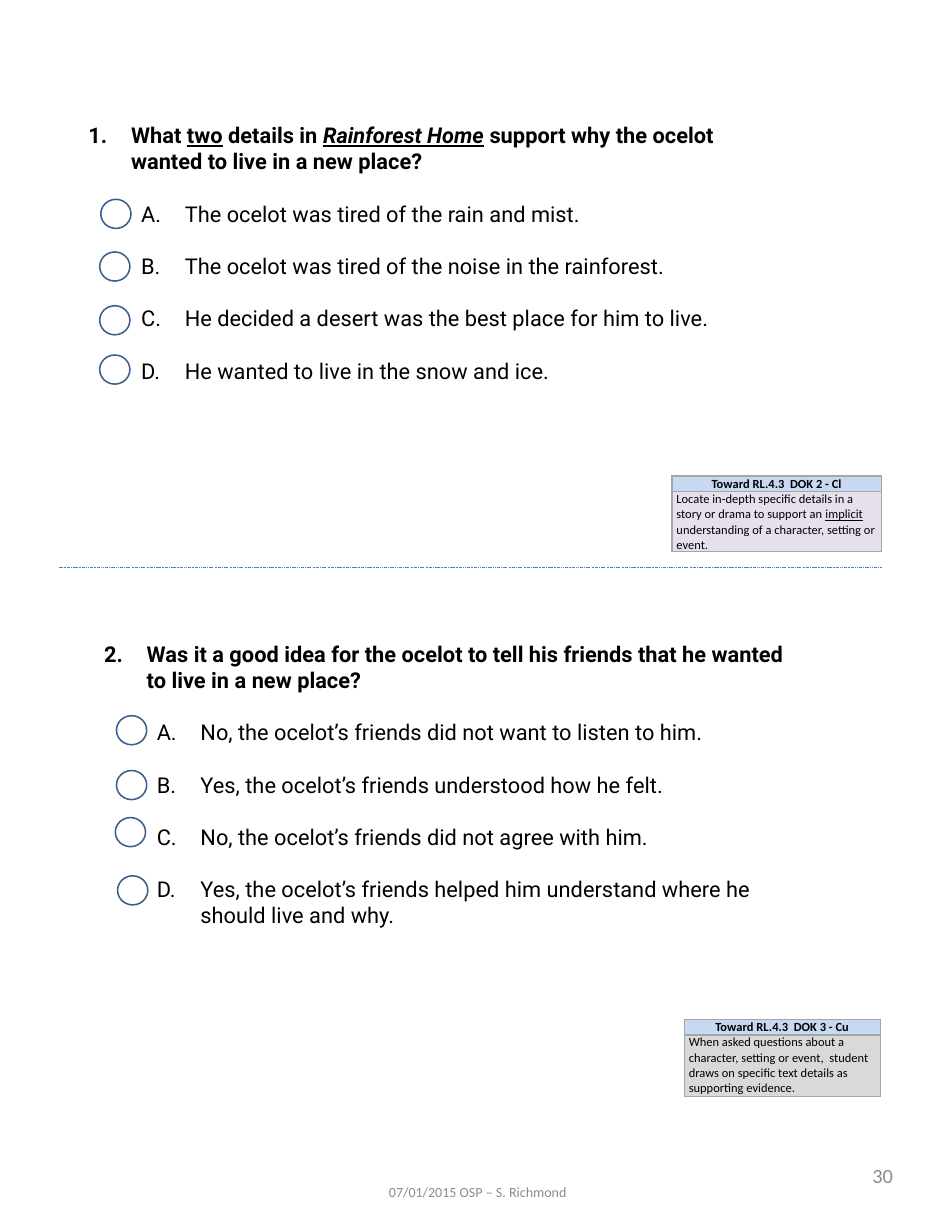
from lxml.etree import SubElement
from pptx import Presentation
from pptx.dml.color import RGBColor
from pptx.enum.shapes import MSO_CONNECTOR, MSO_SHAPE
from pptx.enum.text import MSO_ANCHOR, PP_ALIGN
from pptx.oxml.ns import qn
from pptx.util import Inches, Pt

# Page grid: 85 columns by 110 rows
deck = Presentation()
deck.slide_width, deck.slide_height = Inches(8.5), Inches(11)
COL, ROW = deck.slide_width // 85, deck.slide_height // 110
page = deck.slides.add_slide(deck.slide_layouts[6])
items = page.shapes


def hue(code):
    return RGBColor.from_string(code)


def write(para, text, font="Roboto", size=14, color="000000", bold=False,
          italic=False, line=False, align=None):
    run = para.add_run()
    run.text = text
    face = run.font
    face.name, face.size, face.color.rgb = font, Pt(size), hue(color)
    face.bold, face.italic, face.underline = bold, italic, line
    if align is not None:
        para.alignment = align


# Footer and page number
for left, top, wide, text, size, align in (
        (29.2, 103.5, 26.9, "07/01/2015 OSP – S. Richmond", 9, PP_ALIGN.CENTER),
        (60.9, 102, 19.8, "30", 13, PP_ALIGN.RIGHT)):
    box = items.add_textbox(int(left * COL), int(top * ROW), int(wide * COL), int(5.9 * ROW))
    frame = box.text_frame
    frame.word_wrap, frame.vertical_anchor = True, MSO_ANCHOR.MIDDLE
    write(frame.paragraphs[0], text, font="Calibri", size=size, color="8C8C8C", align=align)

# Dashed rule between the two questions
rule = items.add_connector(MSO_CONNECTOR.STRAIGHT, int(5.3 * COL), int(50.6 * ROW),
                           int(78.7 * COL), int(50.6 * ROW))
rule.line.color.rgb, rule.line.width = hue("4B7EBC"), Pt(0.25)
SubElement(rule._element.spPr.find(qn("a:ln")), qn("a:prstDash"), val="lgDashDotDot")
SubElement(rule._element.spPr, qn("a:effectLst"))

# Questions: left, top, width, stem runs, answers, circle corners
tests = (
    (6.2, 10.3, 62.1,
     (("What ", {}), ("two", {"line": True}), (" details in ", {}),
      ("Rainforest Home", {"italic": True, "line": True}), (" ", {"italic": True}),
      ("support why the ocelot wanted to live in a new place?", {})),
     ("The ocelot was tired of the rain and mist.",
      "The ocelot was tired of the noise in the rainforest.",
      "He decided a desert was the best place for him to live.",
      "He wanted to live in the snow and ice."),
     ((9, 17.8), (8.9, 22.5), (8.9, 27.3), (8.9, 31.7))),
    (7.6, 56.6, 64.9,
     (("Was it a good idea for the ocelot to tell his friends that he wanted "
       "to live in a new place?", {}),),
     ("No, the ocelot’s friends did not want to listen to him.",
      "Yes, the ocelot’s friends understood how he felt.",
      "No, the ocelot’s friends did not agree with him.",
      "Yes, the ocelot’s friends helped him understand where he should live and why."),
     ((10.4, 63.9), (10.4, 68.8), (10.3, 73), (10.5, 78.2))),
)
for num, (left, top, wide, stem, picks, rings) in enumerate(tests, 1):
    box = items.add_textbox(int(left * COL), int(top * ROW), int(wide * COL), int(29.4 * ROW))
    frame = box.text_frame
    frame.word_wrap = True
    frame.margin_left = frame.margin_right = Inches(0.11)
    frame.margin_top = frame.margin_bottom = Inches(0.06)
    rows = [(stem, True)] + [(((pick, {}),), False) for pick in picks]
    for at, (runs, head) in enumerate(rows):
        para = frame.paragraphs[0] if at == 0 else frame.add_paragraph()
        props = para._p.get_or_add_pPr()
        props.set("marL", str(Inches(0.44 if head else 0.92)))
        props.set("indent", str(Inches(-0.38 if head else -0.39)))
        para.space_before = Pt(0 if head else 16.8)
        mark = SubElement(props, qn("a:buAutoNum"),
                          type="arabicPeriod" if head else "alphaUcPeriod")
        if head:
            mark.set("startAt", str(num))
        for text, form in runs:
            write(para, text, bold=head, **form)

    # Answer circles
    for x, y in rings:
        ring = items.add_shape(MSO_SHAPE.OVAL, int(x * COL), int(y * ROW),
                               int(2.7 * COL), int(2.6 * ROW))
        ring.shadow.inherit = False
        ring.fill.solid()
        ring.fill.fore_color.rgb = hue("FFFFFF")
        ring.line.color.rgb, ring.line.width = hue("3A5F8C"), Pt(1)

# Standard tables: left, top, width, body height, body fill, head, body runs
cards = (
    (60, 42.5, 18.7, 5, "E6E0EC", "Toward RL.4.3  DOK 2 - Cl",
     (("Locate in-depth specific details in a story or drama to support an ", False),
      ("implicit ", True),
      ("understanding of a character, setting or event.", False))),
    (61.1, 91, 17.5, 5.5, "D9D9D9", "Toward RL.4.3  DOK 3 - Cu",
     (("When asked questions about a character, setting or event,  student draws "
       "on specific text details as supporting evidence.", False),)),
)
for left, top, wide, high, fill, head, body in cards:
    grid = items.add_table(2, 1, int(left * COL), int(top * ROW), int(wide * COL),
                           int((1.4 + high) * ROW)).table
    grid.rows[0].height, grid.rows[1].height = int(1.4 * ROW), int(high * ROW)
    for at, (tint, runs) in enumerate((("C6D9F1", ((head, False),)), (fill, body))):
        cell = grid.cell(at, 0)
        cell.margin_left = cell.margin_right = Inches(0.04)
        cell.margin_top = cell.margin_bottom = 0
        cell.vertical_anchor = MSO_ANCHOR.TOP if at else MSO_ANCHOR.MIDDLE
        for text, line in runs:
            write(cell.text_frame.paragraphs[0], text, font="Calibri", size=8, bold=at == 0,
                  line=line, align=PP_ALIGN.LEFT if at else PP_ALIGN.CENTER)
        props = cell._tc.get_or_add_tcPr()
        for side in ("lnL", "lnR", "lnT", "lnB"):
            edge = SubElement(props, qn("a:" + side), w=str(Pt(1)))
            SubElement(SubElement(edge, qn("a:solidFill")), qn("a:srgbClr"), val="A6A6A6")
        cell.fill.solid()
        cell.fill.fore_color.rgb = hue(tint)

deck.save("out.pptx")
